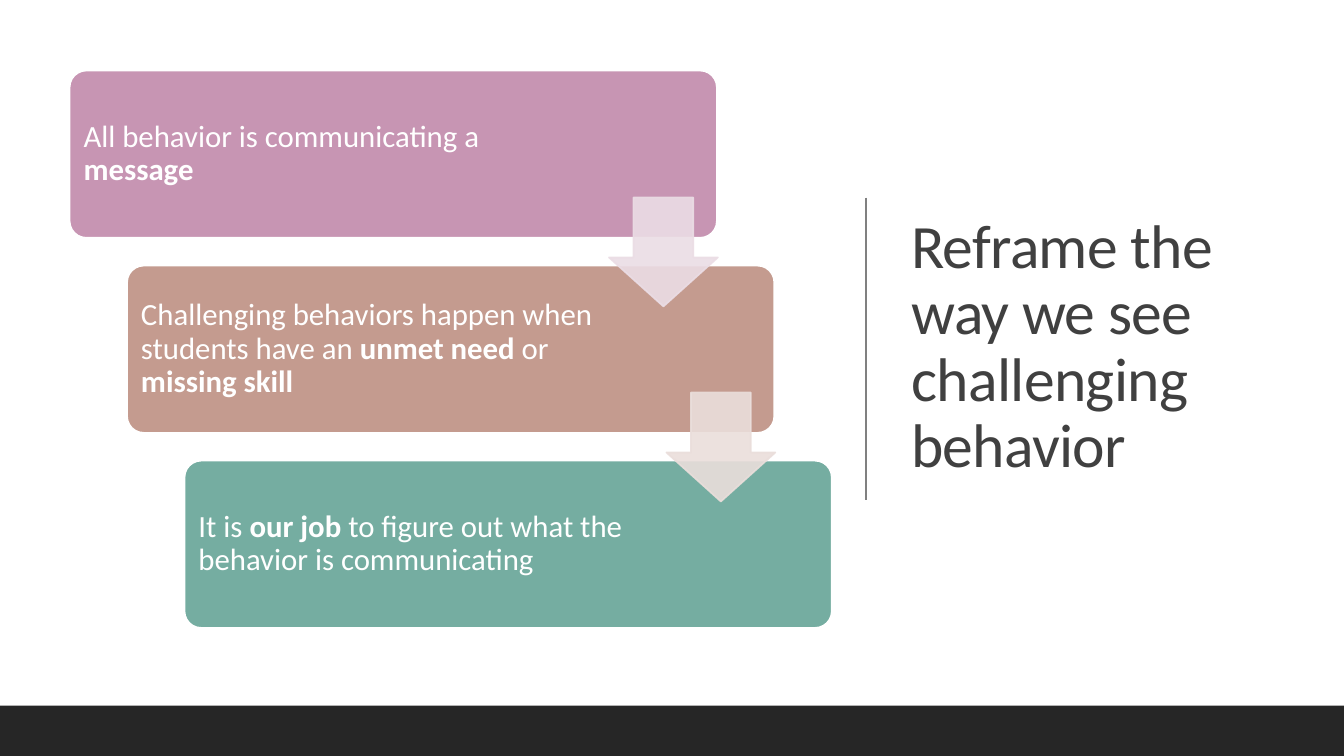
import pptx
import pptx.util
import pptx.dml.color
import pptx.enum.shapes
import pptx.enum.text
from lxml import etree

Inches = pptx.util.Inches
Pt = pptx.util.Pt
RGB = pptx.dml.color.RGBColor.from_string
Shape = pptx.enum.shapes.MSO_SHAPE
middle = pptx.enum.text.MSO_ANCHOR.MIDDLE
left = pptx.enum.text.PP_ALIGN.LEFT
ns = "http://schemas.openxmlformats.org/drawingml/2006/main"

colors = {
    "white": "FFFFFF", "title": "404040", "rule": "808080", "band": "262626",
    "pink": "C795B3", "clay": "C49B8F", "teal": "75ADA1",
    "blush": "EBDDE5", "sand": "EADEDB",
}

deck = pptx.Presentation()
deck.slide_width = Inches(13.33)
deck.slide_height = Inches(7.5)
slide = deck.slides.add_slide(deck.slide_layouts[6])
shapes = slide.shapes


def add_block(kind, x, y, w, h, fill, line=None):
    block = shapes.add_shape(kind, Inches(x), Inches(y), Inches(w), Inches(h))
    block.shadow.inherit = False
    block.fill.solid()
    block.fill.fore_color.rgb = RGB(colors[fill])
    if line:
        block.line.color.rgb = RGB(colors[line])
        block.line.width = Pt(1.25)
    else:
        block.line.fill.background()
    return block


def add_text(frame, parts, size, color):
    frame.word_wrap = True
    frame.vertical_anchor = middle
    para = frame.paragraphs[0]
    para.alignment = left
    para.line_spacing = 0.9
    para.font.name = "Calibri"
    para.font.size = Pt(size)
    para.font.color.rgb = RGB(colors[color])
    for words, bold in parts:
        run = para.add_run()
        run.text = words
        if bold:
            run.font.bold = True
    return para


title = shapes.add_textbox(Inches(8.94), Inches(0.69), Inches(3.69), Inches(5.53))
words = "Reframe the way we see challenging behavior"
para = add_text(title.text_frame, [(words, False)], 44, "title")
para.runs[0].font._element.set("spc", "-50")

rule = shapes.add_connector(
    pptx.enum.shapes.MSO_CONNECTOR.STRAIGHT,
    Inches(8.59), Inches(1.96), Inches(8.59), Inches(4.96))
rule.line.color.rgb = RGB(colors["rule"])
rule.line.width = Pt(1)
etree.SubElement(rule._element.spPr, f"{{{ns}}}effectLst")

add_block(Shape.RECTANGLE, 0, 7, 13.33, 0.5, "band")

steps = [
    ("pink", [("All behavior is communicating a ", False), ("message", True)]),
    ("clay", [("Challenging behaviors happen when students have an ", False),
              ("unmet need", True), (" or ", False), ("missing skill", True)]),
    ("teal", [("It is ", False), ("our job", True),
              (" to figure out what the behavior is communicating", False)]),
]
shift, drop = 0.57, 1.935

for i, (fill, parts) in enumerate(steps):
    card = add_block(Shape.ROUNDED_RECTANGLE, 0.69 + i * shift, 0.7 + i * drop,
                     6.42, 1.66, fill, "white")
    card.adjustments[0] = 0.1
    frame = card.text_frame
    frame.margin_left = frame.margin_top = frame.margin_bottom = Inches(0.09)
    frame.margin_right = Inches(1.73)
    add_text(frame, parts, 22, "white")

for i, fill in enumerate(["blush", "sand"]):
    arrow = add_block(Shape.DOWN_ARROW, 6.04 + i * shift, 1.96 + i * drop,
                      1.08, 1.08, fill, fill)
    arrow.adjustments[0] = 0.55
    arrow.adjustments[1] = 0.45
    for tint in arrow._element.spPr.iter(f"{{{ns}}}srgbClr"):
        etree.SubElement(tint, f"{{{ns}}}alpha", val="90000")

deck.save("out.pptx")
